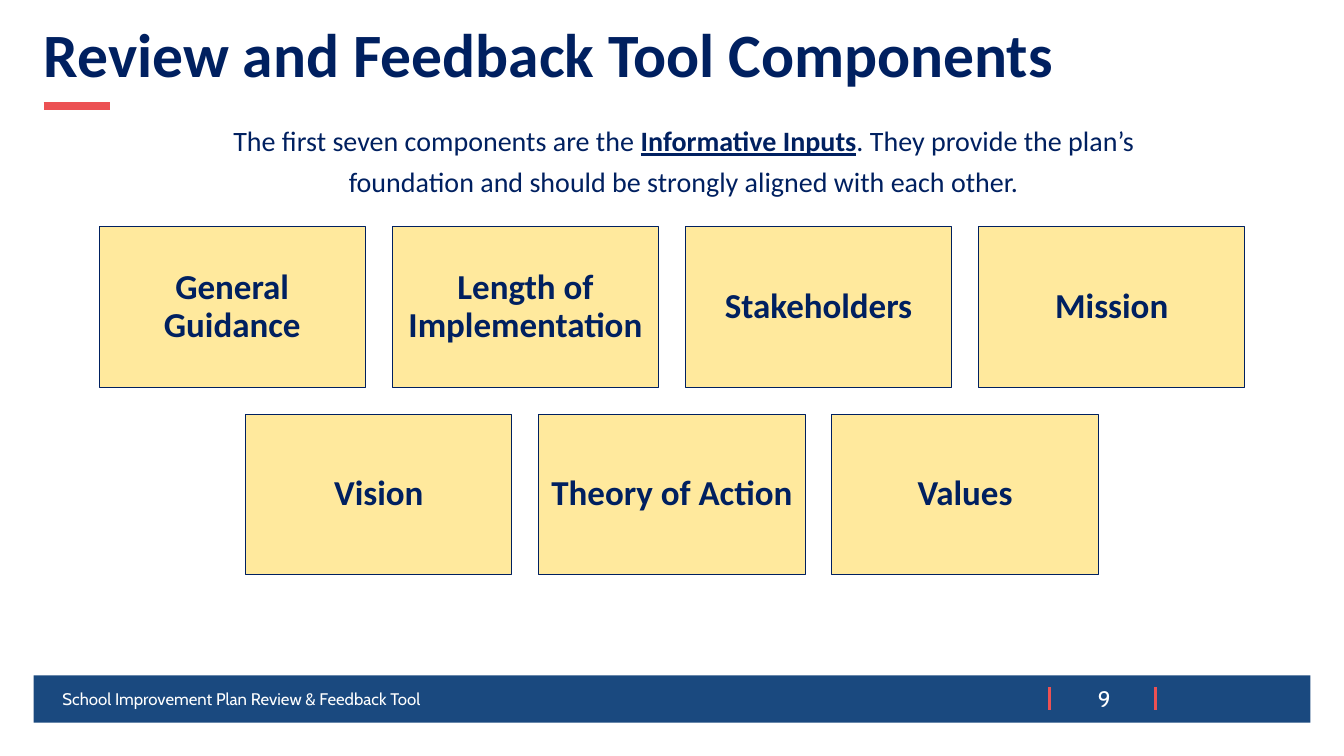
from dataclasses import dataclass

from pptx import Presentation
from pptx import util as u
from pptx.dml.color import RGBColor
from pptx.enum import shapes, text
from pptx.oxml.ns import qn
from lxml import etree

COLUMNS, ROWS = 160, 90


@dataclass(frozen=True)
class Theme:
    navy: str = "002060"
    blue: str = "1A497F"
    red: str = "EC5153"
    yellow: str = "FFE99D"
    white: str = "FFFFFF"
    body_font: str = "Calibri"
    footer_font: str = "Cabin"
    title_size: int = 44
    card_size: int = 25
    intro_size: int = 20
    number_size: int = 16
    footer_size: int = 12


class SlideBuilder:
    """Draws on one slide; all lengths are grid columns and rows."""

    def __init__(self, presentation, theme):
        self.theme = theme
        self.column = presentation.slide_width / COLUMNS
        self.row = presentation.slide_height / ROWS
        self.slide = presentation.slides.add_slide(presentation.slide_layouts[5])

    def place(self, left, top, width, height):
        return (round(left * self.column), round(top * self.row),
                round(width * self.column), round(height * self.row))

    def add_words(self, shape, runs, size, color, font=None, align=text.PP_ALIGN.LEFT,
                  anchor=text.MSO_ANCHOR.MIDDLE, spacing=1.0):
        """Fill a shape with runs, each given as (words, bold, underline)."""
        frame = shape.text_frame
        frame.word_wrap = True
        frame.auto_size = text.MSO_AUTO_SIZE.NONE
        frame.vertical_anchor = anchor
        paragraph = frame.paragraphs[0]
        paragraph.alignment = align
        paragraph.line_spacing = spacing
        paragraph.space_before = u.Pt(0)
        for words, bold, underline in runs:
            run = paragraph.add_run()
            run.text = words
            run.font.name = font or self.theme.body_font
            run.font.size = u.Pt(size)
            run.font.bold = bold
            run.font.underline = underline
            run.font.color.rgb = RGBColor.from_string(color)

    def title(self, words, *area):
        shape = self.slide.shapes.title
        shape.left, shape.top, shape.width, shape.height = self.place(*area)
        self.add_words(shape, [(words, True, False)], self.theme.title_size,
                       self.theme.navy, spacing=0.9)

    def label(self, runs, area, size, color, **style):
        shape = self.slide.shapes.add_textbox(*self.place(*area))
        self.add_words(shape, runs, size, color, **style)

    def box(self, area, fill, outline=None):
        shape = self.slide.shapes.add_shape(
            shapes.MSO_SHAPE.RECTANGLE, *self.place(*area))
        shape.shadow.inherit = False
        shape.fill.solid()
        shape.fill.fore_color.rgb = RGBColor.from_string(fill)
        if outline:
            shape.line.color.rgb = RGBColor.from_string(outline)
            shape.line.width = u.Pt(0.75)
        else:
            shape.line.fill.background()
        return shape

    def card(self, words, *area):
        shape = self.box(area, self.theme.yellow, self.theme.navy)
        frame = shape.text_frame
        frame.margin_left = frame.margin_right = u.Inches(0.1)
        frame.margin_top = frame.margin_bottom = u.Inches(0.1)
        self.add_words(shape, [(words, True, False)], self.theme.card_size,
                       self.theme.navy, align=text.PP_ALIGN.CENTER, spacing=0.9)

    def line(self, left, top, right, bottom, points):
        start_x, start_y, end_x, end_y = self.place(left, top, right, bottom)
        connector = self.slide.shapes.add_connector(
            shapes.MSO_CONNECTOR.STRAIGHT, start_x, start_y, end_x, end_y)
        connector.line.color.rgb = RGBColor.from_string(self.theme.red)
        connector.line.width = u.Pt(points)
        etree.SubElement(connector.element.spPr, qn("a:effectLst"))


def main():
    presentation = Presentation()
    presentation.slide_width = u.Inches(13.333)
    presentation.slide_height = u.Inches(7.5)
    theme = Theme()
    builder = SlideBuilder(presentation, theme)
    center = text.PP_ALIGN.CENTER

    # Title with its accent line
    builder.title("Review and Feedback Tool Components", 4, 2.28, 152, 9.24)
    builder.line(5.2, 12.6, 13.1, 12.6, points=6)

    # Introduction
    builder.label(
        [("The first seven components are the ", False, False),
         ("Informative Inputs", True, True),
         (". They provide the plan’s foundation and should be strongly "
          "aligned with each other.", False, False)],
        (20.5, 13.2, 121.8, 6.6), theme.intro_size, theme.navy,
        align=center, anchor=text.MSO_ANCHOR.TOP, spacing=1.23)

    # Component cards: each row is centred on the slide
    card_rows = [
        ["General Guidance", "Length of Implementation", "Stakeholders", "Mission"],
        ["Vision", "Theory of Action", "Values"],
    ]
    card_width, card_height, gap = 31.7, 19.1, 3.2
    for row_index, names in enumerate(card_rows):
        row_width = len(names) * (card_width + gap) - gap
        left = (COLUMNS - row_width) / 2
        top = 27 + row_index * (card_height + gap)
        for index, name in enumerate(names):
            builder.card(name, left + index * (card_width + gap), top,
                         card_width, card_height)

    # Footer bar with the slide number between two ticks
    builder.box((4, 80.4, 152, 5.64), theme.blue)
    for tick in (124.9, 137.6):
        builder.line(tick, 81.84, tick, 84.48, points=2.25)
    builder.label([("School Improvement Plan Review & Feedback Tool", False, False)],
                  (6.24, 80.8, 101.6, 4.8), theme.footer_size, theme.white,
                  font=theme.footer_font)
    builder.label([("9", False, False)], (127.6, 81, 7.7, 4.4), theme.number_size,
                  theme.white, font=theme.footer_font, align=center)

    presentation.save("out.pptx")


if __name__ == "__main__":
    main()
